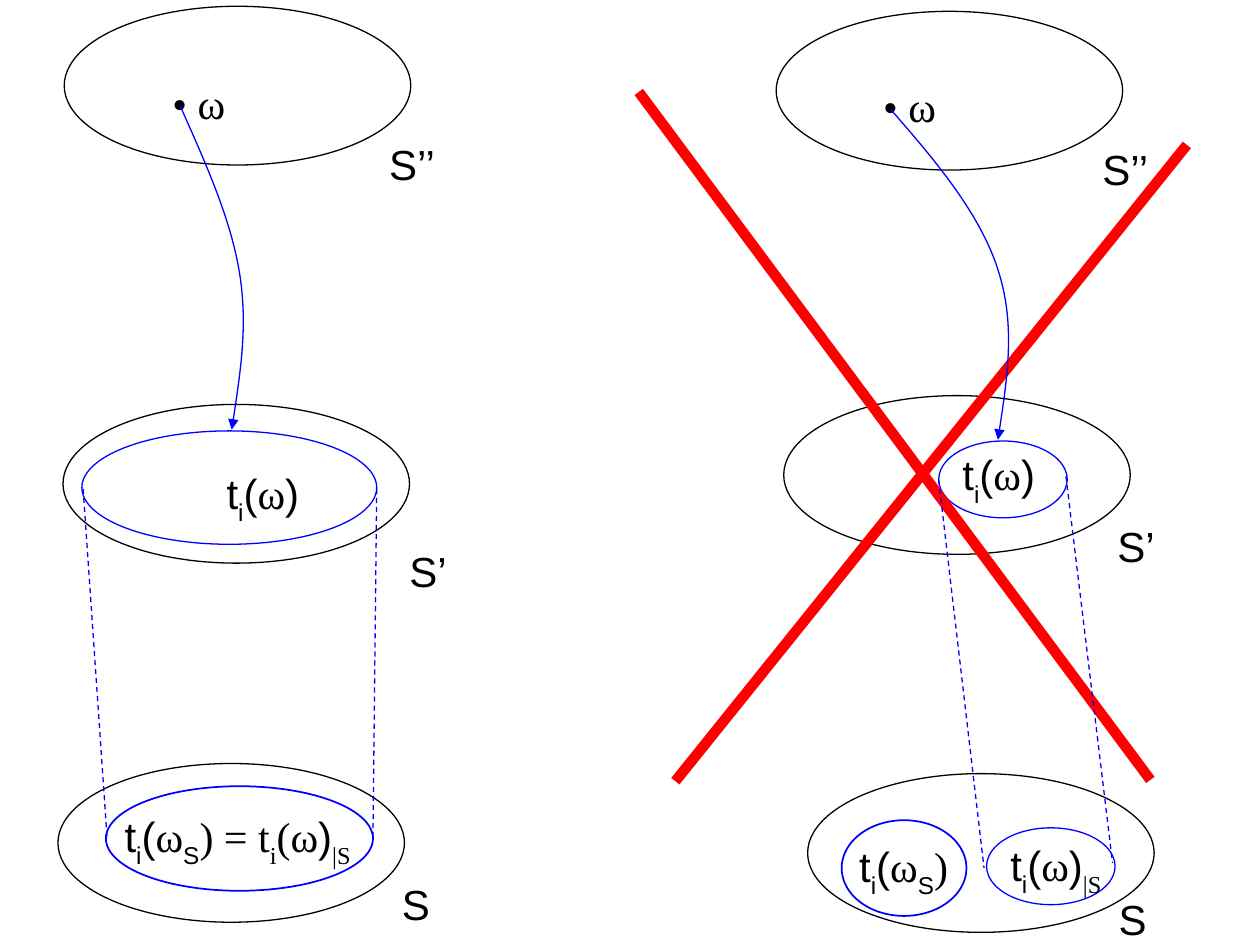
from lxml import etree
from pptx import Presentation
from pptx.dml.color import RGBColor
from pptx.enum.dml import MSO_LINE
from pptx.enum.shapes import MSO_CONNECTOR, MSO_SHAPE
from pptx.enum.text import PP_ALIGN
from pptx.oxml.ns import qn
from pptx.util import Inches, Pt

OVAL, STRAIGHT = MSO_SHAPE.OVAL, MSO_CONNECTOR.STRAIGHT
DASH, LEFT = MSO_LINE.DASH, PP_ALIGN.LEFT
BLACK, WHITE, BLUE, RED = "000000", "FFFFFF", "0000FF", "FF0000"
SANS, SERIF = "Arial", "Times New Roman"

presentation = Presentation()
presentation.slide_width, presentation.slide_height = Inches(10), Inches(7.5)
COLUMN = presentation.slide_width / 10
ROW = presentation.slide_height / 7.5
slide = presentation.slides.add_slide(presentation.slide_layouts[6])
shapes = slide.shapes


def color(hex_string):
    return RGBColor.from_string(hex_string)


def add_text(runs, left, top, width=0.75, height=0.56, size=24, fill=None):
    """Add a label from (text, font, is_subscript) runs."""
    box = shapes.add_textbox(int(left * COLUMN), int(top * ROW),
                             int(width * COLUMN), int(height * ROW))
    if fill:
        box.fill.solid()
        box.fill.fore_color.rgb = color(fill)
    box.text_frame.word_wrap = True
    paragraph = box.text_frame.paragraphs[0]
    paragraph.alignment = LEFT
    for text, font, is_subscript in runs:
        run = paragraph.add_run()
        run.text = text
        run.font.name, run.font.size = font, Pt(size)
        run.font.color.rgb = color(BLACK)
        if is_subscript:
            run.font._element.set("baseline", "-30000")


# Plain labels: the points and the names of the spaces
for text, font, left, top, fill in [
    ("• ω", SERIF, 1.27, 0.57, WHITE),
    ("• ω", SERIF, 6.91, 0.59, WHITE),
    ("S’’", SANS, 2.99, 1.05, WHITE),
    ("S’’", SANS, 8.65, 1.09, None),
    ("S’", SANS, 3.15, 4.28, WHITE),
    ("S’", SANS, 8.77, 4.08, WHITE),
    ("S", SANS, 3.09, 6.92, None),
    ("S", SANS, 8.78, 7.04, None),
]:
    add_text([(text, font, False)], left, top, fill=fill)

# Every outline is collected as (shape, colour, width, dash) and styled at the end
outlines = []

space_size = (2.75, 1.26)
image_size = (1.02, 0.61)
for left, top, (width, height), line_color, line_width, fill in [
    (0.65, 3.42, (2.34, 0.9), BLUE, 0.75, WHITE),
    (0.51, 0.05, space_size, BLACK, 0.75, None),
    (0.50, 3.21, space_size, BLACK, 0.75, None),
    (0.46, 6.06, space_size, BLACK, 0.75, None),
    (6.16, 0.09, space_size, BLACK, 0.75, None),
    (6.22, 3.14, space_size, BLACK, 0.75, None),
    (6.41, 6.14, space_size, BLACK, 0.75, None),
    (0.84, 6.24, (2.12, 0.83), BLUE, 1, None),
    (6.68, 6.51, (0.99, 0.76), BLUE, 1, None),
    (7.83, 6.57, image_size, BLUE, 0.75, None),
    (7.45, 3.50, image_size, BLUE, 0.75, None),
]:
    ellipse = shapes.add_shape(OVAL, int(left * COLUMN), int(top * ROW),
                               int(width * COLUMN), int(height * ROW))
    ellipse.shadow.inherit = False
    if fill:
        ellipse.fill.solid()
        ellipse.fill.fore_color.rgb = color(fill)
    else:
        ellipse.fill.background()
    outlines.append((ellipse, line_color, line_width, None))

# The red cross and the dashed projections
for x1, y1, x2, y2, line_color, line_width, dash in [
    (5.07, 0.73, 9.13, 6.19, RED, 6, None),
    (5.36, 6.20, 9.42, 1.15, RED, 6, None),
    (2.99, 3.88, 2.96, 6.65, BLUE, 0.75, DASH),
    (0.66, 3.88, 0.85, 6.65, BLUE, 0.75, DASH),
    (8.46, 3.78, 8.83, 6.85, BLUE, 0.75, DASH),
    (7.45, 3.81, 7.81, 6.89, BLUE, 0.75, DASH),
]:
    connector = shapes.add_connector(STRAIGHT, int(x1 * COLUMN), int(y1 * ROW),
                                     int(x2 * COLUMN), int(y2 * ROW))
    etree.SubElement(connector._element.spPr, qn("a:effectLst"))
    outlines.append((connector, line_color, line_width, dash))

# Curved arrows: a start, then two cubic segments of three points each
arrows = []
for start, *points in [
    [(1.43, 0.84), (1.63, 1.29), (1.83, 1.73), (1.90, 2.16),
     (1.97, 2.58), (1.90, 3.00), (1.84, 3.41)],
    [(7.07, 0.87), (7.43, 1.28), (7.78, 1.70), (7.92, 2.14),
     (8.06, 2.57), (7.99, 3.03), (7.92, 3.49)],
]:
    builder = shapes.build_freeform(int(start[0] * COLUMN), int(start[1] * ROW))
    builder.add_line_segments([(int(x * COLUMN), int(y * ROW)) for x, y in points],
                              close=False)
    arrow = builder.convert_to_shape()
    arrow.shadow.inherit = False
    arrow.fill.background()
    segments = list(arrow._element.iter(qn("a:lnTo")))
    for first in range(0, len(segments), 3):
        curve, *others = segments[first:first + 3]
        for other in others:
            curve.append(other[0])
            other.getparent().remove(other)
        bezier = etree.SubElement(curve.getparent(), qn("a:cubicBezTo"))
        bezier.extend(list(curve))
        curve.getparent().remove(curve)
    outlines.append((arrow, BLUE, 0.75, None))
    arrows.append(arrow)

for shape, line_color, line_width, dash in outlines:
    shape.line.color.rgb = color(line_color)
    shape.line.width = Pt(line_width)
    if dash:
        shape.line.dash_style = dash
for arrow in arrows:
    etree.SubElement(arrow.line._get_or_add_ln(), qn("a:tailEnd"), type="triangle")

# Formulas
t_i = [("t", SANS, False), ("i", SANS, True), ("(", SANS, False),
       ("ω", SERIF, False)]
t_i_omega = t_i + [(")", SANS, False)]
t_i_omega_s = t_i + [("S", SANS, True)]
restricted = ("|S", SERIF, True)
equation = t_i_omega_s + [(") = t", SERIF, False), ("i", SERIF, True),
                          ("(ω", SERIF, False), (")", SANS, False), restricted]
for runs, left, top, width in [
    (t_i_omega, 1.70, 3.66, 1.03),
    (t_i_omega, 7.54, 3.51, 1.03),
    (equation, 0.89, 6.38, 2.49),
    (t_i_omega_s + [(")", SERIF, False)], 6.72, 6.62, 1.18),
    (t_i_omega + [restricted], 7.92, 6.61, 1.03),
]:
    add_text(runs, left, top, width)

presentation.save("out.pptx")
